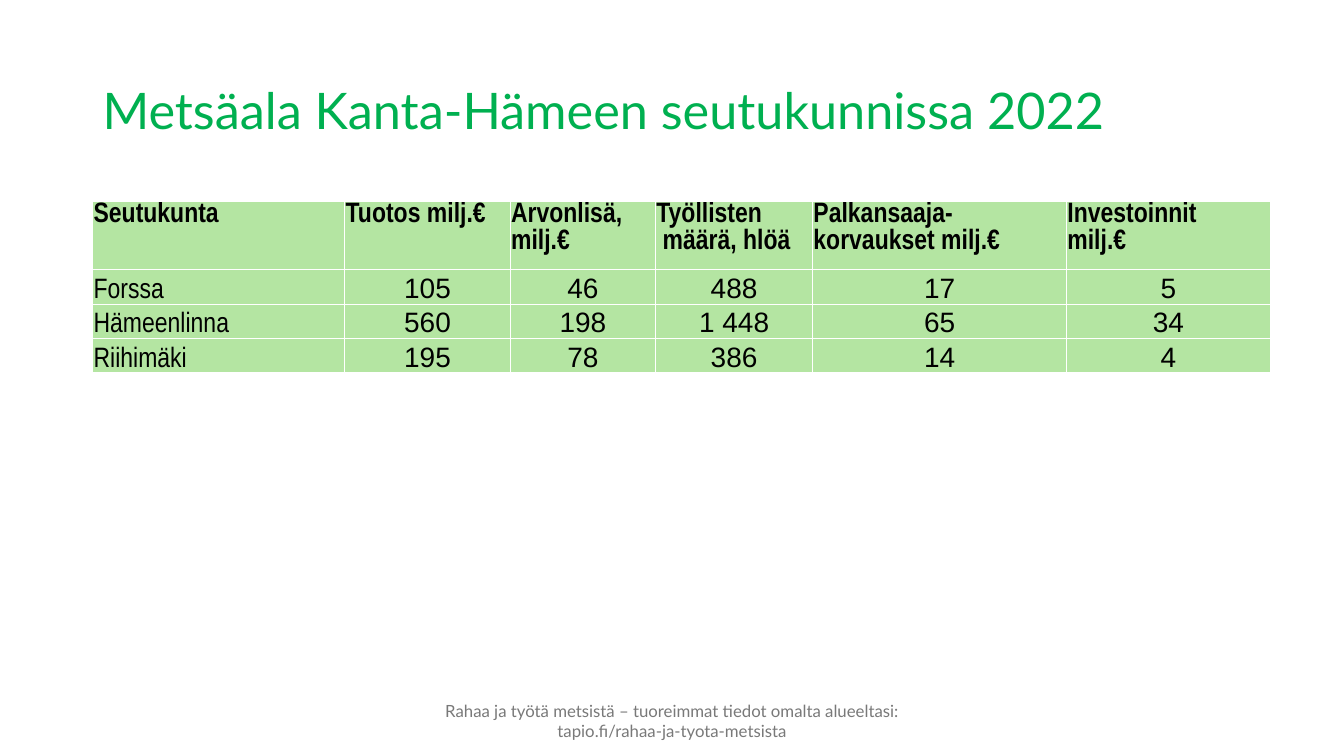
from dataclasses import dataclass

from lxml.etree import SubElement
from pptx import Presentation
from pptx.dml.color import RGBColor
from pptx.enum.text import MSO_ANCHOR, MSO_AUTO_SIZE, PP_ALIGN
from pptx.oxml.ns import qn
from pptx.util import Cm, Pt


@dataclass(frozen=True)
class Theme:
    green: str = "00B050"
    pale: str = "B4E5A2"
    gray: str = "797979"
    black: str = "000000"
    white: str = "FFFFFF"
    head: int = 36
    body: int = 20
    foot: int = 12
    sans: str = "Lato"
    slim: str = "Arial Narrow"
    digit: str = "Arial"


theme = Theme()


def style(para, face, size, color, align=PP_ALIGN.LEFT, bold=False):
    para.alignment = align
    font = para.font
    font.name, font.size, font.bold = face, Pt(size), bold
    font.color.rgb = RGBColor.from_string(color)


def edge(cell):
    """Draw a thin white border on all four sides; call before filling."""
    props = cell._tc.get_or_add_tcPr()
    for side in ("a:lnL", "a:lnR", "a:lnT", "a:lnB"):
        line = SubElement(props, qn(side), w=str(Pt(1)))
        fill = SubElement(line, qn("a:solidFill"))
        SubElement(fill, qn("a:srgbClr"), val=theme.white)


deck = Presentation()
deck.slide_width, deck.slide_height = Cm(33.87), Cm(19.05)
slide = deck.slides.add_slide(deck.slide_layouts[5])

# Title
title = slide.shapes.title
title.left, title.top = Cm(2.33), Cm(1.02)
title.width, title.height = Cm(29.21), Cm(3.68)
frame = title.text_frame
frame.text = "Metsäala Kanta-Hämeen seutukunnissa 2022"
frame.auto_size = MSO_AUTO_SIZE.NONE
frame.vertical_anchor = MSO_ANCHOR.MIDDLE
frame.paragraphs[0].line_spacing = 0.9
style(frame.paragraphs[0], theme.sans, theme.head, theme.green)

# Footer
foot = slide.shapes.add_textbox(Cm(10.82), Cm(17.65), Cm(12.24), Cm(1.02))
frame = foot.text_frame
frame.word_wrap = True
frame.vertical_anchor = MSO_ANCHOR.MIDDLE
frame.text = (
    "Rahaa ja työtä metsistä – tuoreimmat tiedot omalta alueeltasi: "
    "tapio.fi/rahaa-ja-tyota-metsista"
)
style(frame.paragraphs[0], theme.sans, theme.foot, theme.gray, PP_ALIGN.CENTER)

# Table of regions
rows = [
    ("Seutukunta", "Tuotos milj.€", "Arvonlisä, milj.€",
     "Työllisten\n määrä, hlöä", "Palkansaaja-korvaukset milj.€",
     "Investoinnit\nmilj.€"),
    ("Forssa", "105", "46", "488", "17", "5"),
    ("Hämeenlinna", "560", "198", "1 448", "65", "34"),
    ("Riihimäki", "195", "78", "386", "14", "4"),
]
widths = [6.35, 4.17, 3.66, 3.96, 6.4, 5.13]
heights = [1.47] + [0.51] * 3

table = slide.shapes.add_table(
    len(rows), len(widths), Cm(2.34), Cm(5.08), Cm(sum(widths)), Cm(sum(heights))
).table
table.first_row = table.horz_banding = False
for col, width in zip(table.columns, widths):
    col.width = Cm(width)
for row, height in zip(table.rows, heights):
    row.height = Cm(height)

for r, row in enumerate(rows):
    for c, text in enumerate(row):
        cell = table.cell(r, c)
        label = r == 0 or c == 0
        edge(cell)
        cell.fill.solid()
        cell.fill.fore_color.rgb = RGBColor.from_string(theme.pale)
        inset = Cm(0.02 if label else 0)
        cell.margin_left = cell.margin_right = cell.margin_top = inset
        cell.margin_bottom = Cm(0)
        cell.vertical_anchor = MSO_ANCHOR.BOTTOM if r else MSO_ANCHOR.TOP
        cell.text = text
        face = theme.slim if label else theme.digit
        align = PP_ALIGN.LEFT if label else PP_ALIGN.CENTER
        for para in cell.text_frame.paragraphs:
            style(para, face, theme.body, theme.black, align, bold=r == 0)

deck.save("out.pptx")
